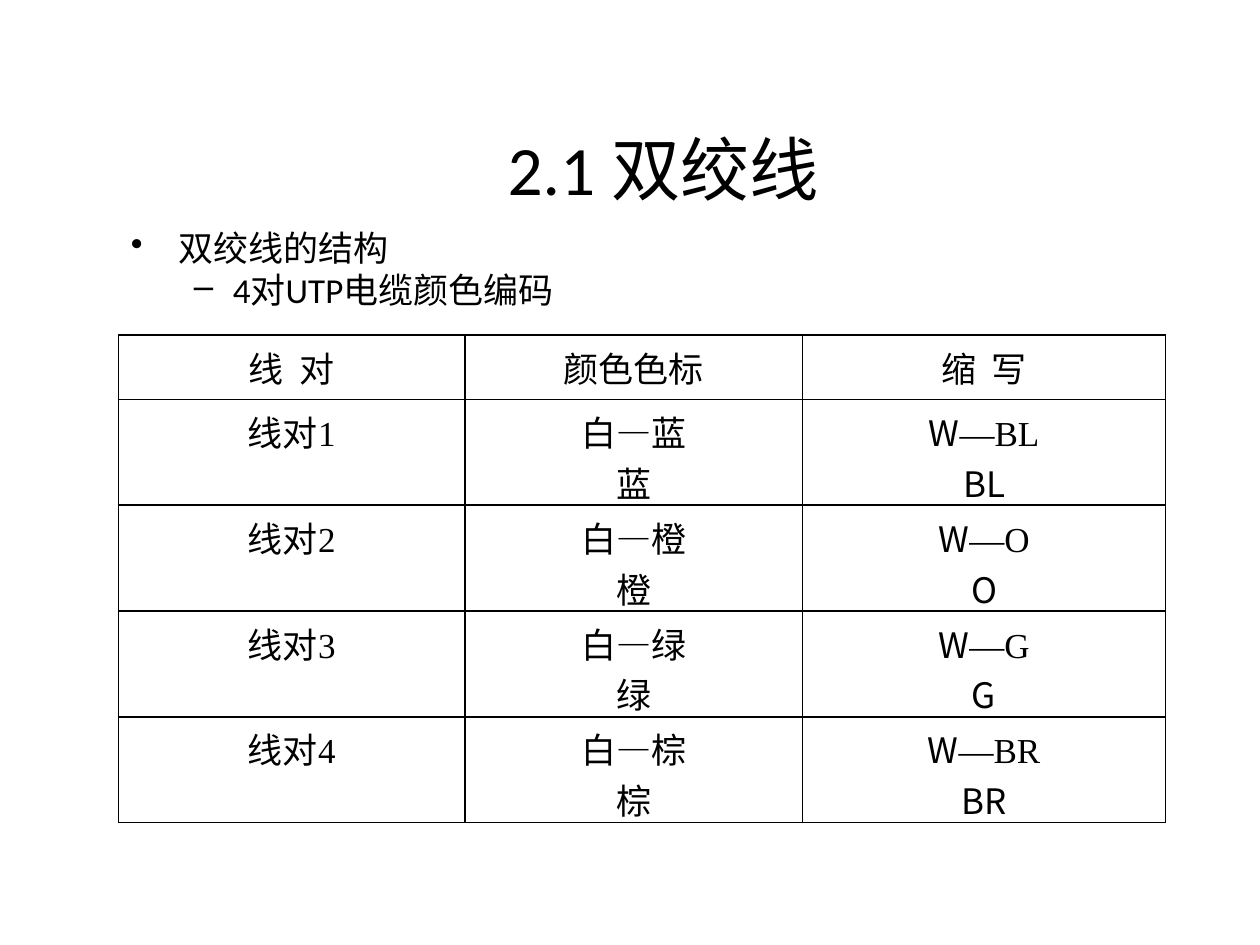
from dataclasses import dataclass

from lxml import etree
from pptx import Presentation
from pptx.dml.color import RGBColor
from pptx.enum.text import MSO_ANCHOR, PP_ALIGN
from pptx.oxml.ns import qn
from pptx.util import Inches, Pt

CENTER = PP_ALIGN.CENTER
MIDDLE = MSO_ANCHOR.MIDDLE


@dataclass(frozen=True)
class Theme:
    ink: RGBColor = RGBColor(0, 0, 0)
    heading_face: str = "Calibri"
    serif_face: str = "Times New Roman"
    sans_face: str = "Noto Sans CJK KR"
    title_size: float = 39.6
    body_size: float = 20
    rule_width: float = 1


@dataclass(frozen=True)
class Area:
    left: float
    top: float
    width: float
    height: float

    def emu(self) -> tuple:
        return tuple(Inches(v) for v in (self.left, self.top, self.width, self.height))


@dataclass(frozen=True)
class Bullet:
    text: str
    mark: str
    level: int
    margin: float
    hanging: float


@dataclass(frozen=True)
class WirePair:
    color: str
    code: str


THEME = Theme()
SLIDE_WIDTH, SLIDE_HEIGHT = 10, 7.5
LEFT_EDGE = 0.094 * SLIDE_WIDTH
TITLE_AREA = Area(1.33, 0.94, 7.87, 0.79)
BULLET_AREA = Area(LEFT_EDGE, 1.75, 4.21, 5.75)
COLUMN_WIDTHS = (2.75, 2.68, 2.88)
HEADER_HEIGHT, PAIR_HEIGHT = 0.51, 0.84
HEADINGS = ("线  对", "颜色色标", "缩  写")
PAIRS = (WirePair("蓝", "BL"), WirePair("橙", "O"),
         WirePair("绿", "G"), WirePair("棕", "BR"))
BULLETS = (Bullet("双绞线的结构", "•", 0, 0.38, 0.38),
           Bullet("4对UTP电缆颜色编码", "–", 1, 0.81, 0.31))


def add_run(paragraph, text: str, face: str, size: float = THEME.body_size) -> None:
    run = paragraph.add_run()
    run.text = text
    run.font.size = Pt(size)
    run.font.color.rgb = THEME.ink
    run.font.name = face
    east_asian = etree.SubElement(run.font._element, qn("a:ea"))
    east_asian.set("typeface", THEME.sans_face)


def add_frame(slide, area: Area):
    frame = slide.shapes.add_textbox(*area.emu()).text_frame
    frame.word_wrap = True
    return frame


def add_title(slide, text: str) -> None:
    frame = add_frame(slide, TITLE_AREA)
    frame.vertical_anchor = MIDDLE
    frame.paragraphs[0].alignment = CENTER
    add_run(frame.paragraphs[0], text, THEME.heading_face, THEME.title_size)


def add_bullets(slide, bullets: tuple[Bullet, ...]) -> None:
    frame = add_frame(slide, BULLET_AREA)
    for index, bullet in enumerate(bullets):
        paragraph = frame.add_paragraph() if index else frame.paragraphs[0]
        paragraph.level = bullet.level
        properties = paragraph._p.get_or_add_pPr()
        properties.set("marL", str(Inches(bullet.margin)))
        properties.set("indent", str(-Inches(bullet.hanging)))
        etree.SubElement(properties, qn("a:buChar")).set("char", bullet.mark)
        add_run(paragraph, bullet.text, THEME.heading_face)


def rule_cell(cell) -> None:
    """Draw all four borders and leave the cell unfilled."""
    properties = cell._tc.get_or_add_tcPr()
    for side in ("lnL", "lnR", "lnT", "lnB"):
        line = etree.SubElement(properties, qn(f"a:{side}"), w=str(Pt(THEME.rule_width)))
        fill = etree.SubElement(line, qn("a:solidFill"))
        etree.SubElement(fill, qn("a:srgbClr"), val=str(THEME.ink))
    cell.fill.background()


def fill_cell(cell, lines: list) -> None:
    """Write one centred paragraph per line, each a list of (text, face)."""
    rule_cell(cell)
    frame = cell.text_frame
    for index, pieces in enumerate(lines):
        paragraph = frame.add_paragraph() if index else frame.paragraphs[0]
        paragraph.alignment = CENTER
        for text, face in pieces:
            add_run(paragraph, text, face)


def pair_cells(number: int, pair: WirePair) -> list:
    serif, sans = THEME.serif_face, THEME.sans_face
    return [
        [[(f"线对{number}", serif)]],
        [[(f"白—{pair.color}", serif)], [(pair.color, serif)]],
        [[("W", sans), (f"—{pair.code}", serif)], [(pair.code, sans)]],
    ]


def add_color_table(slide) -> None:
    rows = [[[[(heading, THEME.serif_face)]] for heading in HEADINGS]]
    rows += [pair_cells(number, pair) for number, pair in enumerate(PAIRS, 1)]
    heights = [HEADER_HEIGHT] + [PAIR_HEIGHT] * len(PAIRS)
    area = Area(LEFT_EDGE, 2.66, sum(COLUMN_WIDTHS), sum(heights))
    table = slide.shapes.add_table(len(rows), len(HEADINGS), *area.emu()).table
    table.first_row = table.horz_banding = False
    for column, width in zip(table.columns, COLUMN_WIDTHS):
        column.width = Inches(width)
    for row, height, contents in zip(table.rows, heights, rows):
        row.height = Inches(height)
        for cell, lines in zip(row.cells, contents):
            fill_cell(cell, lines)


def main() -> None:
    deck = Presentation()
    deck.slide_width, deck.slide_height = Inches(SLIDE_WIDTH), Inches(SLIDE_HEIGHT)
    slide = deck.slides.add_slide(deck.slide_layouts[6])
    add_title(slide, "2.1 双绞线")
    add_bullets(slide, BULLETS)
    add_color_table(slide)
    deck.save("out.pptx")


if __name__ == "__main__":
    main()
